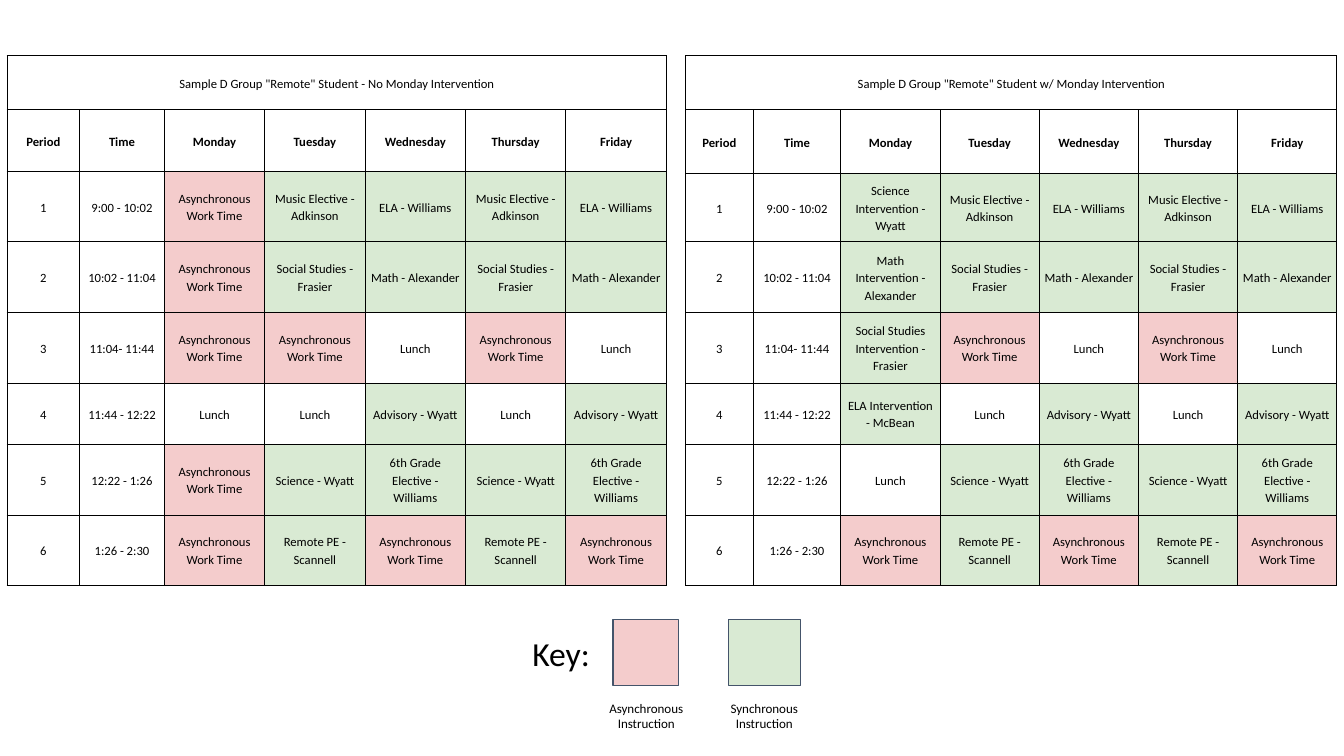
from lxml import etree
from pptx import Presentation
from pptx.dml.color import RGBColor
from pptx.enum.shapes import MSO_SHAPE
from pptx.enum.text import MSO_ANCHOR, PP_ALIGN
from pptx.oxml.ns import qn
from pptx.util import Inches, Pt

CENTER, LEFT = PP_ALIGN.CENTER, PP_ALIGN.LEFT
MIDDLE = MSO_ANCHOR.MIDDLE
RECTANGLE = MSO_SHAPE.RECTANGLE

BLACK = RGBColor(0x00, 0x00, 0x00)
SLATE = RGBColor(0x44, 0x54, 0x6A)
ASYNC_PINK = RGBColor(0xF4, 0xCC, 0xCC)
SYNC_GREEN = RGBColor(0xD9, 0xEA, 0xD3)
FONT = "Calibri"

ASYNC, LUNCH = "Asynchronous Work Time", "Lunch"
HEADINGS = ["Period", "Time", "Monday", "Tuesday", "Wednesday", "Thursday", "Friday"]

# Time, Tuesday and Thursday class, Wednesday and Friday class
PERIODS = [
    ("9:00 - 10:02", "Music Elective - Adkinson", "ELA - Williams"),
    ("10:02 - 11:04", "Social Studies - Frasier", "Math - Alexander"),
    ("11:04- 11:44", ASYNC, LUNCH),
    ("11:44 - 12:22", LUNCH, "Advisory - Wyatt"),
    ("12:22 - 1:26", "Science - Wyatt", "6th Grade Elective - Williams"),
    ("1:26 - 2:30", "Remote PE - Scannell", ASYNC),
]
MONDAY_REMOTE = [ASYNC, ASYNC, ASYNC, LUNCH, ASYNC, ASYNC]
MONDAY_INTERVENTION = [
    "Science Intervention - Wyatt",
    "Math Intervention - Alexander",
    "Social Studies Intervention - Frasier",
    "ELA Intervention - McBean",
    LUNCH,
    ASYNC,
]


def write(frame, text, size, align=CENTER, bold=False):
    paragraph = frame.paragraphs[0]
    paragraph.alignment = align
    run = paragraph.add_run()
    run.text = text
    run.font.name, run.font.size, run.font.bold = FONT, Pt(size), bold
    run.font.color.rgb = BLACK
    return paragraph


def outline_cell(cell):
    properties = cell._tc.get_or_add_tcPr()
    for side in ("a:lnL", "a:lnR", "a:lnT", "a:lnB"):
        border = etree.SubElement(properties, qn(side), w=str(Pt(0.75)))
        solid = etree.SubElement(border, qn("a:solidFill"))
        etree.SubElement(solid, qn("a:srgbClr"), val=str(BLACK))


def fill_cell(cell, color):
    if color is None:
        cell.fill.background()
    else:
        cell.fill.solid()
        cell.fill.fore_color.rgb = color


def class_color(name):
    return {ASYNC: ASYNC_PINK, LUNCH: None}.get(name, SYNC_GREEN)


def add_schedule(slide, box, title, monday, lead_widths, row_heights):
    left, top, width, height = box
    grid = [[title] + [""] * 6, HEADINGS]
    for number, ((time, tue_thu, wed_fri), mon) in enumerate(zip(PERIODS, monday), 1):
        grid.append([str(number), time, mon] + [tue_thu, wed_fri] * 2)

    table = slide.shapes.add_table(
        len(grid), len(HEADINGS),
        Inches(left), Inches(top), Inches(width), Inches(height)).table
    table.first_row = table.horz_banding = False

    # The five days share what the first two columns leave
    day_width = (width - sum(lead_widths)) / 5
    for column, column_width in zip(table.columns, lead_widths + [day_width] * 5):
        column.width = Inches(column_width)
    for row, row_height in zip(table.rows, row_heights):
        row.height = Inches(row_height)
    table.cell(0, 0).merge(table.cell(0, len(HEADINGS) - 1))

    for r, texts in enumerate(grid):
        for c, text in enumerate(texts):
            cell = table.cell(r, c)
            outline_cell(cell)
            fill_cell(cell, class_color(text) if r > 1 and c > 1 else None)
            cell.vertical_anchor = MIDDLE
            cell.margin_left = cell.margin_right = Inches(0.04)
            cell.margin_top = cell.margin_bottom = Inches(0.03)
            if text:
                write(cell.text_frame, text, 9, bold=r == 1).line_spacing = 1.15


def add_label(slide, box, text, size, align=CENTER):
    frame = slide.shapes.add_textbox(*map(Inches, box)).text_frame
    frame.word_wrap = True
    frame.vertical_anchor = MIDDLE
    frame.margin_left = frame.margin_right = Inches(0.13)
    frame.margin_top = frame.margin_bottom = Inches(0.13)
    write(frame, text, size, align)


def add_key(slide, left, top):
    add_label(slide, (left, top + 0.17, 0.95, 0.32), "Key:", 24, LEFT)
    # Swatch offset and width, caption offset, caption, colour
    entries = [
        (0.93, 0.65, 0.66, "Asynchronous Instruction", ASYNC_PINK),
        (2.08, 0.71, 1.83, "Synchronous Instruction", SYNC_GREEN),
    ]
    for swatch_x, swatch_width, caption_x, caption, color in entries:
        swatch = slide.shapes.add_shape(
            RECTANGLE, Inches(left + swatch_x), Inches(top),
            Inches(swatch_width), Inches(0.65))
        swatch.shadow.inherit = False
        swatch.fill.solid()
        swatch.fill.fore_color.rgb = color
        swatch.line.color.rgb = SLATE
        swatch.line.width = Pt(0.75)
        add_label(slide, (left + caption_x, top + 0.79, 1.2, 0.32), caption, 9.3)


def main():
    deck = Presentation()
    deck.slide_width, deck.slide_height = Inches(13.33), Inches(7.5)
    slide = deck.slides.add_slide(deck.slide_layouts[6])

    # Weekly schedules
    later_rows = [0.7, 0.7, 0.61, 0.7, 0.7]
    add_schedule(slide, (0.07, 0.55, 6.54, 5.28),
                 'Sample D Group "Remote" Student - No Monday Intervention',
                 MONDAY_REMOTE, [0.72, 0.84], [0.54, 0.61, 0.7] + later_rows)
    add_schedule(slide, (6.8, 0.55, 6.46, 5.28),
                 'Sample D Group "Remote" Student w/ Monday Intervention',
                 MONDAY_INTERVENTION, [0.67, 0.87], [0.54, 0.63, 0.68] + later_rows)

    # Colour key
    add_key(slide, 5.15, 6.15)
    deck.save("out.pptx")


if __name__ == "__main__":
    main()
